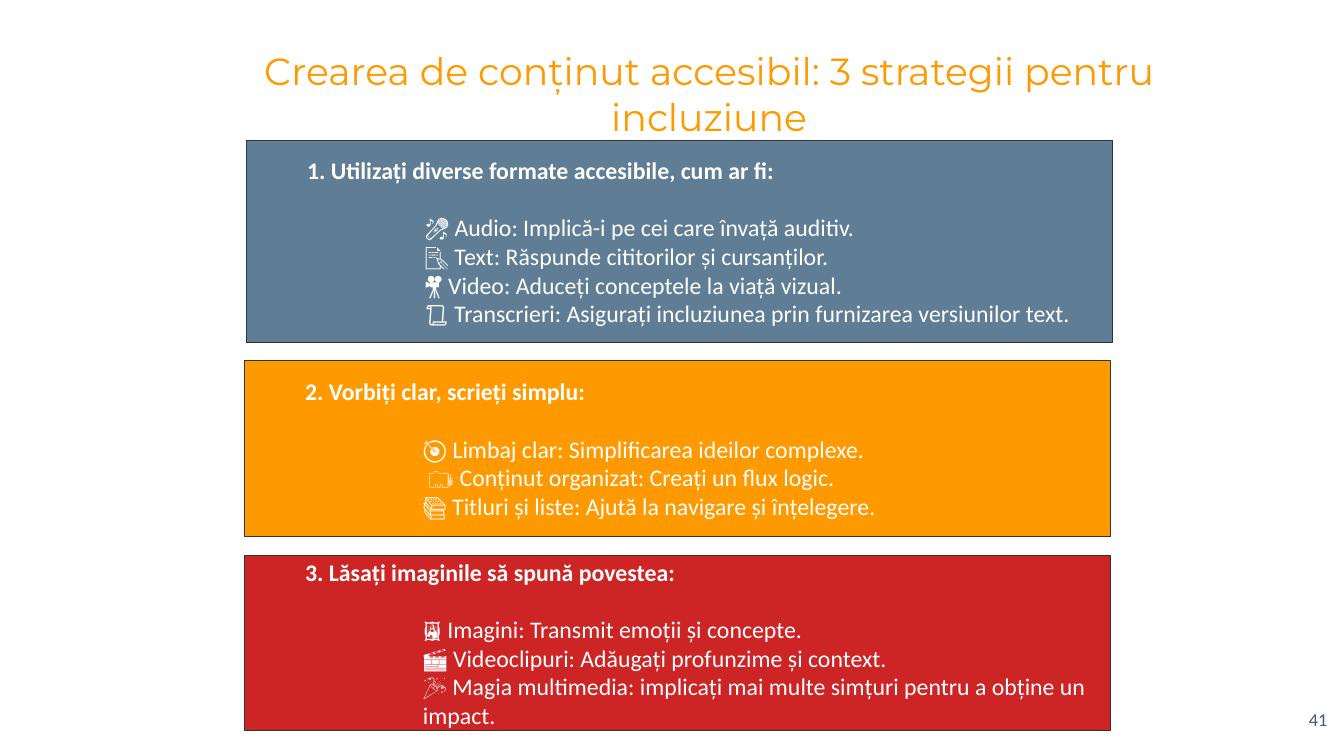
from pptx import Presentation
from pptx.dml.color import RGBColor
from pptx.enum.shapes import MSO_SHAPE
from pptx.enum.text import MSO_ANCHOR, MSO_AUTO_SIZE, PP_ALIGN
from pptx.util import Cm, Pt

COLOURS = {
    "slate": "5F7D95",
    "orange": "FF9900",
    "red": "CD2525",
    "outline": "333333",
    "white": "FFFFFF",
    "number": "445D73",
}

# left, top, height in cm; fill; heading; items
STRATEGIES = [
    (6.22, 3.53, 5.11, "slate", "1. Utilizați diverse formate accesibile, cum ar fi:", [
        "🎤 Audio: Implică-i pe cei care învață auditiv.",
        "📝 Text: Răspunde cititorilor și cursanților.",
        "🎥 Video: Aduceți conceptele la viață vizual.",
        "📜 Transcrieri: Asigurați incluziunea prin furnizarea versiunilor text.",
    ]),
    (6.17, 9.09, 4.42, "orange", "2. Vorbiți clar, scrieți simplu:", [
        "🎯 Limbaj clar: Simplificarea ideilor complexe.",
        " 🗂 Conținut organizat: Creați un flux logic.",
        "📚 Titluri și liste: Ajută la navigare și înțelegere.",
    ]),
    (6.17, 14, 4.42, "red", "3. Lăsați imaginile să spună povestea:", [
        "🖼 Imagini: Transmit emoții și concepte.",
        "🎬 Videoclipuri: Adăugați profunzime și context.",
        "🎉 Magia multimedia: implicați mai multe simțuri pentru a obține un impact.",
    ]),
]


def colour(name):
    return RGBColor.from_string(COLOURS[name])


def format_frame(frame, inset, anchor):
    frame.word_wrap = True
    frame.auto_size = MSO_AUTO_SIZE.NONE
    frame.vertical_anchor = anchor
    frame.margin_left = frame.margin_right = inset
    frame.margin_top = frame.margin_bottom = inset


def write(para, text, size, font, colour_name, align=PP_ALIGN.LEFT, bold=False):
    para.text = text
    para.alignment = align
    for span in para.runs:
        span.font.size = Pt(size)
        span.font.name = font
        span.font.bold = bold
        span.font.color.rgb = colour(colour_name)


def indent(para, margin):
    properties = para._p.get_or_add_pPr()
    properties.set("marL", str(margin))
    properties.set("indent", "0")


def add_title(page, text):
    title = page.shapes.title
    title.left, title.top, title.width, title.height = Cm(4.32), Cm(1.3), Cm(27.1), Cm(2.11)
    format_frame(title.text_frame, Cm(0.36), MSO_ANCHOR.MIDDLE)
    write(title.text_frame.paragraphs[0], text, 27, "Montserrat", "orange", PP_ALIGN.CENTER)


def add_page_number(page, number):
    box = page.shapes.add_textbox(Cm(31.67), Cm(17.6), Cm(2.03), Cm(1.45))
    format_frame(box.text_frame, Cm(0.25), MSO_ANCHOR.TOP)
    write(box.text_frame.paragraphs[0], number, 13, "Calibri", "number", PP_ALIGN.RIGHT)


def add_strategy(page, left, top, height, fill, heading, items):
    box = page.shapes.add_shape(MSO_SHAPE.RECTANGLE, Cm(left), Cm(top), Cm(21.82), Cm(height))
    box.shadow.inherit = False
    box.fill.solid()
    box.fill.fore_color.rgb = colour(fill)
    box.line.color.rgb = colour("outline")
    box.line.width = Pt(0.75)

    frame = box.text_frame
    format_frame(frame, Cm(0.25), MSO_ANCHOR.MIDDLE)
    para = frame.paragraphs[0]
    write(para, heading, 17, "Calibri", "white", bold=True)
    indent(para, Cm(1.27))
    para.space_after = Pt(20.7)
    for item in items:
        para = frame.add_paragraph()
        write(para, item, 17, "Calibri", "white")
        indent(para, Cm(4.24))


def main():
    deck = Presentation()
    deck.slide_width, deck.slide_height = Cm(33.87), Cm(19.05)
    page = deck.slides.add_slide(deck.slide_layouts[5])
    add_title(page, "Crearea de conținut accesibil: 3 strategii pentru incluziune")
    add_page_number(page, "41")
    for strategy in STRATEGIES:
        add_strategy(page, *strategy)
    deck.save("out.pptx")


if __name__ == "__main__":
    main()
